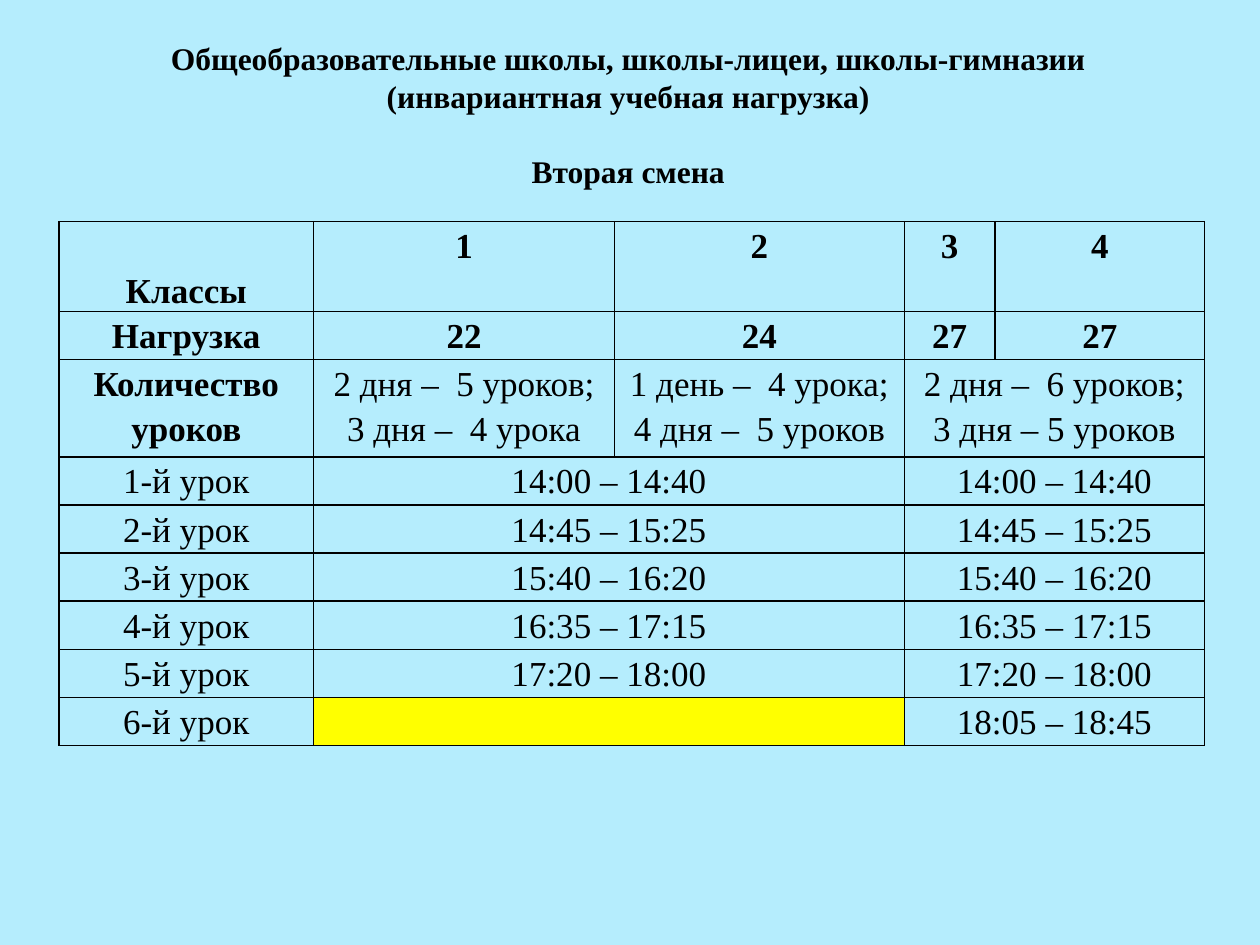
from dataclasses import dataclass

from lxml import etree
from pptx import Presentation
from pptx.dml.color import RGBColor
from pptx.enum import text as t
from pptx.oxml import ns
from pptx.util import Cm, Pt

BLACK = "000000"
SKY = "B5EDFD"
YELLOW = "FFFF00"
COLUMN_WIDTHS = (5.13, 6.07, 5.84, 1.83, 4.22)
LESSON_HEIGHT = 0.97
ROW_HEIGHTS = (1.81, LESSON_HEIGHT, 1.96) + (LESSON_HEIGHT,) * 6
HEADING = (
    "Общеобразовательные школы, школы-лицеи, школы-гимназии",
    "(инвариантная учебная нагрузка)",
    "Вторая смена",
)
LESSON_TIMES = (
    "14:00 – 14:40",
    "14:45 – 15:25",
    "15:40 – 16:20",
    "16:35 – 17:15",
    "17:20 – 18:00",
    "18:05 – 18:45",
)
LAST_JUNIOR_LESSON = 5


@dataclass
class Entry:
    lines: tuple = ()
    bold: bool = False
    span: int = 1
    fill: str = ""
    anchor: t.MSO_ANCHOR = t.MSO_ANCHOR.TOP


def color(value: str) -> RGBColor:
    return RGBColor.from_string(value)


def apply(target, values: dict) -> None:
    for name, value in values.items():
        setattr(target, name, value)


def write(frame, lines: tuple, size: int, bold: bool, spacing: float) -> None:
    for index, line in enumerate(lines):
        paragraph = frame.paragraphs[0] if index == 0 else frame.add_paragraph()
        apply(paragraph, {"alignment": t.PP_ALIGN.CENTER, "line_spacing": spacing})
        run = paragraph.add_run()
        run.text = line
        apply(run.font, {"name": "Times New Roman", "size": Pt(size), "bold": bold})
        run.font.color.rgb = color(BLACK)


def add_borders(cell) -> None:
    properties = cell._tc.get_or_add_tcPr()
    for side in ("a:lnL", "a:lnR", "a:lnT", "a:lnB"):
        line = etree.SubElement(properties, ns.qn(side), w=str(Pt(1)))
        solid = etree.SubElement(line, ns.qn("a:solidFill"))
        etree.SubElement(solid, ns.qn("a:srgbClr"), val=BLACK)


def paint(cell, fill: str) -> None:
    if fill:
        cell.fill.solid()
        cell.fill.fore_color.rgb = color(fill)
    else:
        cell.fill.background()


def schedule_rows() -> list:
    def bold_row(*labels: str) -> list:
        return [Entry((label,), bold=True) for label in labels]

    classes = bold_row("Классы", "1", "2", "3", "4")
    classes[0].anchor = t.MSO_ANCHOR.BOTTOM
    rows = [
        classes,
        bold_row("Нагрузка", "22", "24", "27", "27"),
        [
            Entry(("Количество уроков",), bold=True),
            Entry(("2 дня –  5 уроков;", "3 дня –  4 урока")),
            Entry(("1 день –  4 урока;", "4 дня –  5 уроков")),
            Entry(("2 дня –  6 уроков;", "3 дня – 5 уроков"), span=2),
        ],
    ]
    for number, time in enumerate(LESSON_TIMES, start=1):
        senior = Entry((time,), span=2)
        junior = senior if number <= LAST_JUNIOR_LESSON else Entry(span=2, fill=YELLOW)
        rows.append([Entry((f"{number}-й урок",)), junior, senior])
    return rows


def add_heading(slide) -> None:
    heading = slide.shapes.title
    apply(heading, {"left": Cm(3.1), "top": Cm(0.64), "width": Cm(19.13), "height": Cm(3.33)})
    frame = heading.text_frame
    apply(frame, {
        "word_wrap": False,
        "auto_size": t.MSO_AUTO_SIZE.NONE,
        "vertical_anchor": t.MSO_ANCHOR.MIDDLE,
    })
    write(frame, HEADING, 18, True, 1.0)
    frame.paragraphs[-1].space_before = Pt(21)


def add_schedule(slide) -> None:
    schedule = slide.shapes.add_table(
        len(ROW_HEIGHTS), len(COLUMN_WIDTHS), Cm(1.19), Cm(4.47),
        Cm(sum(COLUMN_WIDTHS)), Cm(sum(ROW_HEIGHTS)),
    ).table
    apply(schedule, {"first_row": False, "horz_banding": False})
    for column, width in zip(schedule.columns, COLUMN_WIDTHS):
        column.width = Cm(width)
    for row, height in zip(schedule.rows, ROW_HEIGHTS):
        row.height = Cm(height)

    for row_index, entries in enumerate(schedule_rows()):
        column_index = 0
        for entry in entries:
            last = column_index + entry.span - 1
            cell = schedule.cell(row_index, column_index)
            if entry.span > 1:
                cell.merge(schedule.cell(row_index, last))
            for covered in range(column_index, last + 1):
                part = schedule.cell(row_index, covered)
                add_borders(part)
                paint(part, entry.fill)
            apply(cell, {
                "margin_left": Cm(0.1),
                "margin_right": Cm(0.1),
                "margin_top": 0,
                "margin_bottom": 0,
                "vertical_anchor": entry.anchor,
            })
            write(cell.text_frame, entry.lines, 20, entry.bold, 1.15)
            column_index = last + 1


def main() -> None:
    presentation = Presentation()
    apply(presentation, {"slide_width": Cm(25.4), "slide_height": Cm(19.05)})
    slide = presentation.slides.add_slide(presentation.slide_layouts[5])
    slide.background.fill.solid()
    slide.background.fill.fore_color.rgb = color(SKY)
    add_heading(slide)
    add_schedule(slide)
    presentation.save("out.pptx")


if __name__ == "__main__":
    main()
